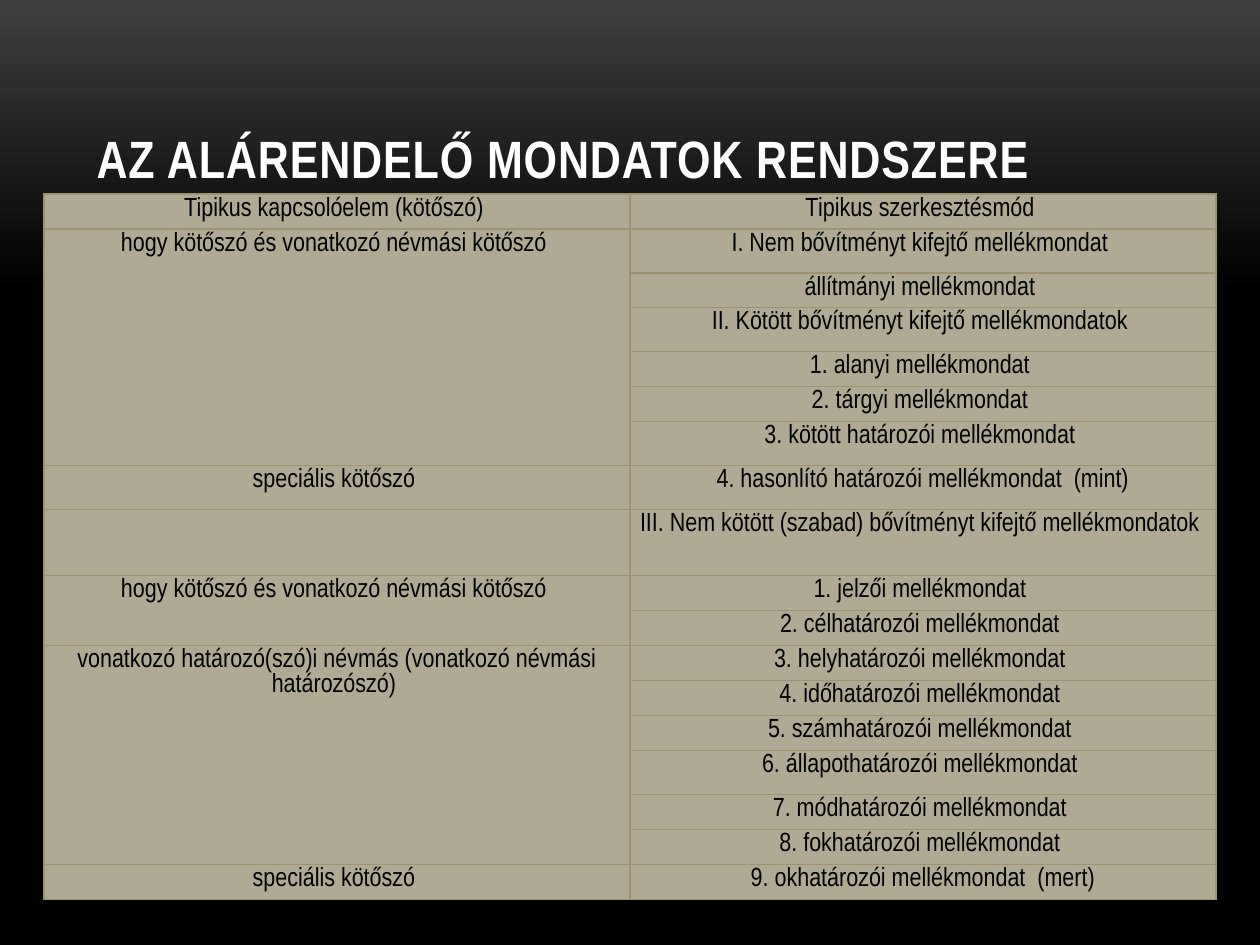
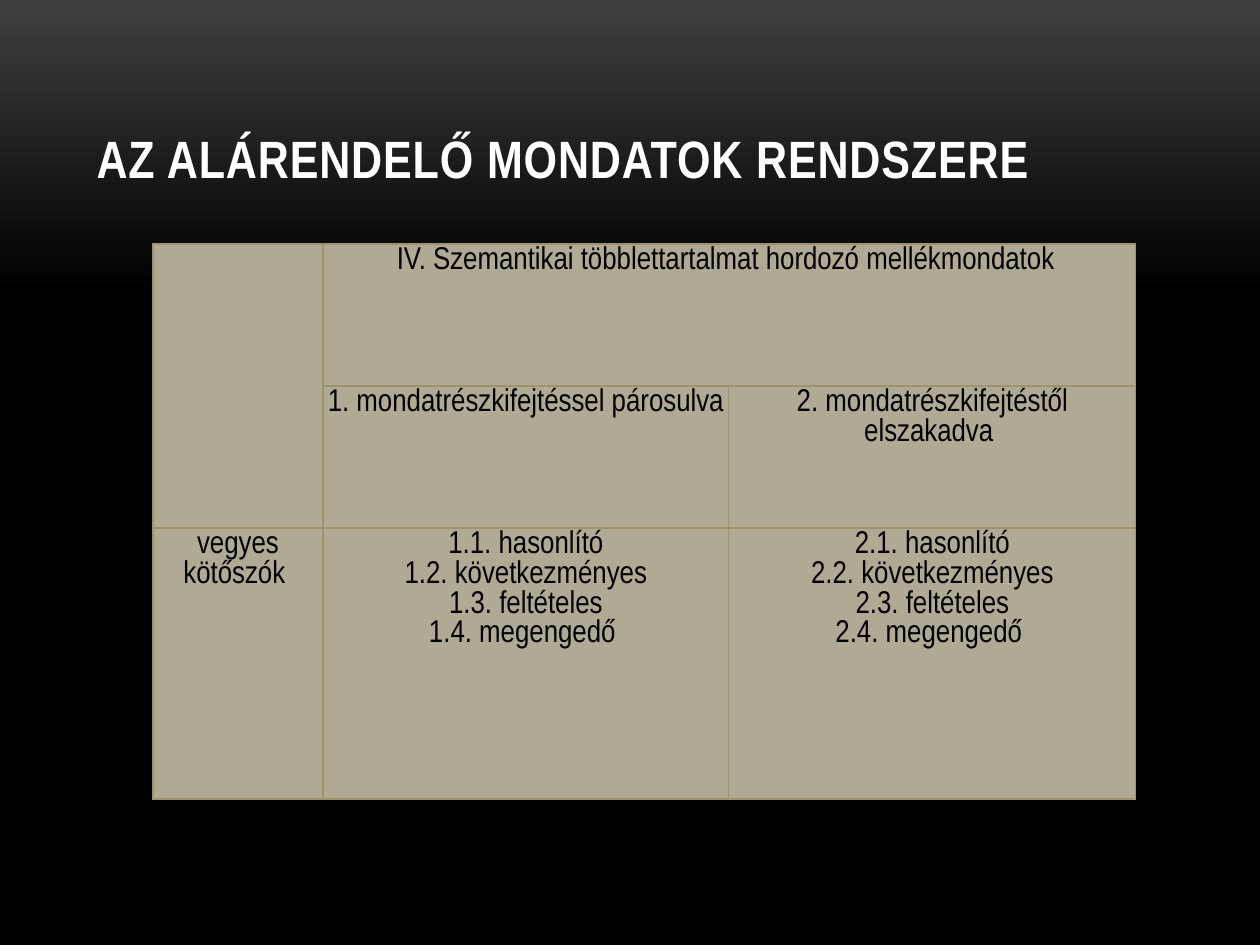
"""Build two slides that tabulate the system of Hungarian subordinate clauses."""
from dataclasses import dataclass

from lxml import etree
from pptx import Presentation
from pptx import util as u
from pptx.dml.color import RGBColor
from pptx.enum import text
from pptx.oxml.ns import qn

EMU_PER_PX = 914400 / 126
FONT = "Arial Narrow"
HEADING = "AZ ALÁRENDELŐ MONDATOK RENDSZERE"
COLOURS = {
    "glow": "3F3F3F",
    "night": "000000",
    "title": "FFFFFF",
    "cell": "B0AA94",
    "border": "9D936F",
    "ink": "000000",
}
TITLE_BOX = {"left": 84, "top": 38, "width": 1092, "height": 157}
CELL_MARGINS = ("margin_left", "margin_top", "margin_right", "margin_bottom")
CELL_INSET = 3
LOW, MID, TALL = 35, 44, 66


@dataclass(frozen=True)
class Merge:
    row: int
    column: int
    rows: int
    columns: int


@dataclass(frozen=True)
class ClauseTable:
    left: int
    top: int
    columns: tuple[int, ...]
    rows: tuple[int, ...]
    size: int
    merges: tuple[Merge, ...]
    entries: dict[tuple[int, int], str]


CLAUSE_TYPES = (
    (LOW, "Tipikus szerkesztésmód "),
    (MID, "I. Nem bővítményt kifejtő mellékmondat "),
    (LOW, "állítmányi mellékmondat "),
    (MID, "II. Kötött bővítményt kifejtő mellékmondatok "),
    (LOW, "1. alanyi mellékmondat "),
    (LOW, "2. tárgyi mellékmondat "),
    (MID, "3. kötött határozói mellékmondat "),
    (MID, "4. hasonlító határozói mellékmondat  (mint)"),
    (TALL, "III. Nem kötött (szabad) bővítményt kifejtő mellékmondatok "),
    (LOW, "1. jelzői mellékmondat "),
    (LOW, "2. célhatározói mellékmondat "),
    (LOW, "3. helyhatározói mellékmondat "),
    (LOW, "4. időhatározói mellékmondat "),
    (LOW, "5. számhatározói mellékmondat "),
    (MID, "6. állapothatározói mellékmondat "),
    (LOW, "7. módhatározói mellékmondat "),
    (LOW, "8. fokhatározói mellékmondat "),
    (LOW, "9. okhatározói mellékmondat  (mert)"),
)
GENERAL_CONJUNCTION = "hogy kötőszó és vonatkozó névmási kötőszó "
SPECIAL_CONJUNCTION = "speciális kötőszó "
CONJUNCTIONS = {
    0: "Tipikus kapcsolóelem (kötőszó) ",
    1: GENERAL_CONJUNCTION,
    7: SPECIAL_CONJUNCTION,
    9: GENERAL_CONJUNCTION,
    11: "vonatkozó határozó(szó)i névmás (vonatkozó névmási határozószó) ",
    17: SPECIAL_CONJUNCTION,
}
SEMANTIC_KINDS = ("hasonlító", "következményes", "feltételes", "megengedő ")


def numbered_kinds(group: int) -> str:
    """Return the semantic kinds numbered within a group, one per line."""
    return "\n".join(f"{group}.{n}. {kind}" for n, kind in enumerate(SEMANTIC_KINDS, 1))


TABLES = (
    ClauseTable(
        left=44, top=194, columns=(586, 586),
        rows=tuple(height for height, _ in CLAUSE_TYPES), size=15,
        merges=(Merge(1, 0, 6, 1), Merge(9, 0, 2, 1), Merge(11, 0, 6, 1)),
        entries={(row, 0): label for row, label in CONJUNCTIONS.items()}
        | {(row, 1): label for row, (_, label) in enumerate(CLAUSE_TYPES)},
    ),
    ClauseTable(
        left=153, top=244, columns=(170, 406, 407), rows=(142, 142, 271), size=18,
        merges=(Merge(0, 0, 2, 1), Merge(0, 1, 1, 2)),
        entries={
            (0, 1): "IV. Szemantikai többlettartalmat hordozó mellékmondatok ",
            (1, 1): "1. mondatrészkifejtéssel párosulva ",
            (1, 2): "2. mondatrészkifejtéstől elszakadva ",
            (2, 0): "vegyes kötőszók ",
            (2, 1): numbered_kinds(1),
            (2, 2): numbered_kinds(2),
        },
    ),
)


def px(length: int) -> u.Emu:
    """Convert pixels to EMU."""
    return u.Emu(round(length * EMU_PER_PX))


def colour(name: str) -> RGBColor:
    """Look up a palette colour."""
    return RGBColor.from_string(COLOURS[name])


def apply(target: object, formats: dict[str, object]) -> None:
    """Set every attribute named in the formats."""
    for name, value in formats.items():
        setattr(target, name, value)


def paint_background(master) -> None:
    """Give the master the dark vertical gradient."""
    fill = master.background.fill
    fill.gradient()
    fill.gradient_angle = 270
    for stop, (name, position) in zip(fill.gradient_stops, (("glow", 0), ("night", 0.31))):
        stop.color.rgb = colour(name)
        stop.position = position


def write_title(slide) -> None:
    """Fill and format the title placeholder."""
    title = slide.shapes.title
    apply(title, {side: px(length) for side, length in TITLE_BOX.items()})
    apply(title.text_frame, {
        "text": HEADING,
        "word_wrap": True,
        "auto_size": text.MSO_AUTO_SIZE.NONE,
        "vertical_anchor": text.MSO_ANCHOR.BOTTOM,
    })
    paragraph = title.text_frame.paragraphs[0]
    paragraph.alignment = text.PP_ALIGN.LEFT
    heading = paragraph.runs[0]
    apply(heading.font, {"name": FONT, "size": u.Pt(30), "bold": True})
    heading.font.color.rgb = colour("title")
    heading._r.get_or_add_rPr().set("spc", "50")


def draw_borders(cell) -> None:
    """Line all four sides of a cell."""
    properties = cell._tc.get_or_add_tcPr()
    for index, side in enumerate(("lnL", "lnR", "lnT", "lnB")):
        line = etree.Element(qn(f"a:{side}"), w=str(u.Pt(0.75)))
        fill = etree.SubElement(line, qn("a:solidFill"))
        etree.SubElement(fill, qn("a:srgbClr"), val=COLOURS["border"])
        properties.insert(index, line)


def format_cell(cell, entry: str, size: int) -> None:
    """Write an entry and style its cell."""
    apply(cell, {margin: px(CELL_INSET) for margin in CELL_MARGINS})
    cell.fill.solid()
    cell.fill.fore_color.rgb = colour("cell")
    draw_borders(cell)
    paragraph = cell.text_frame.paragraphs[0]
    apply(paragraph, {"text": entry, "alignment": text.PP_ALIGN.CENTER})
    for run in paragraph.runs:
        apply(run.font, {"name": FONT, "size": u.Pt(size)})
        run.font.color.rgb = colour("ink")
    etree.SubElement(paragraph._p, qn("a:endParaRPr"), sz=str(size * 100))


def draw_table(slide, plan: ClauseTable) -> None:
    """Draw a clause table with its merged cells."""
    table = slide.shapes.add_table(
        len(plan.rows), len(plan.columns), px(plan.left), px(plan.top),
        px(sum(plan.columns)), px(sum(plan.rows)),
    ).table
    apply(table, {"first_row": False, "horz_banding": False})
    for column, width in zip(table.columns, plan.columns):
        column.width = px(width)
    for r, height in enumerate(plan.rows):
        table.rows[r].height = px(height)
        for c in range(len(plan.columns)):
            format_cell(table.cell(r, c), plan.entries.get((r, c), ""), plan.size)
    for m in plan.merges:
        table.cell(m.row, m.column).merge(
            table.cell(m.row + m.rows - 1, m.column + m.columns - 1))


def main() -> None:
    """Build and save the presentation."""
    deck = Presentation()
    apply(deck, {"slide_width": px(1260), "slide_height": px(945)})
    paint_background(deck.slide_master)
    title_only = deck.slide_layouts[5]
    for plan in TABLES:
        slide = deck.slides.add_slide(title_only)
        write_title(slide)
        draw_table(slide, plan)
    deck.save("out.pptx")


if __name__ == "__main__":
    main()
